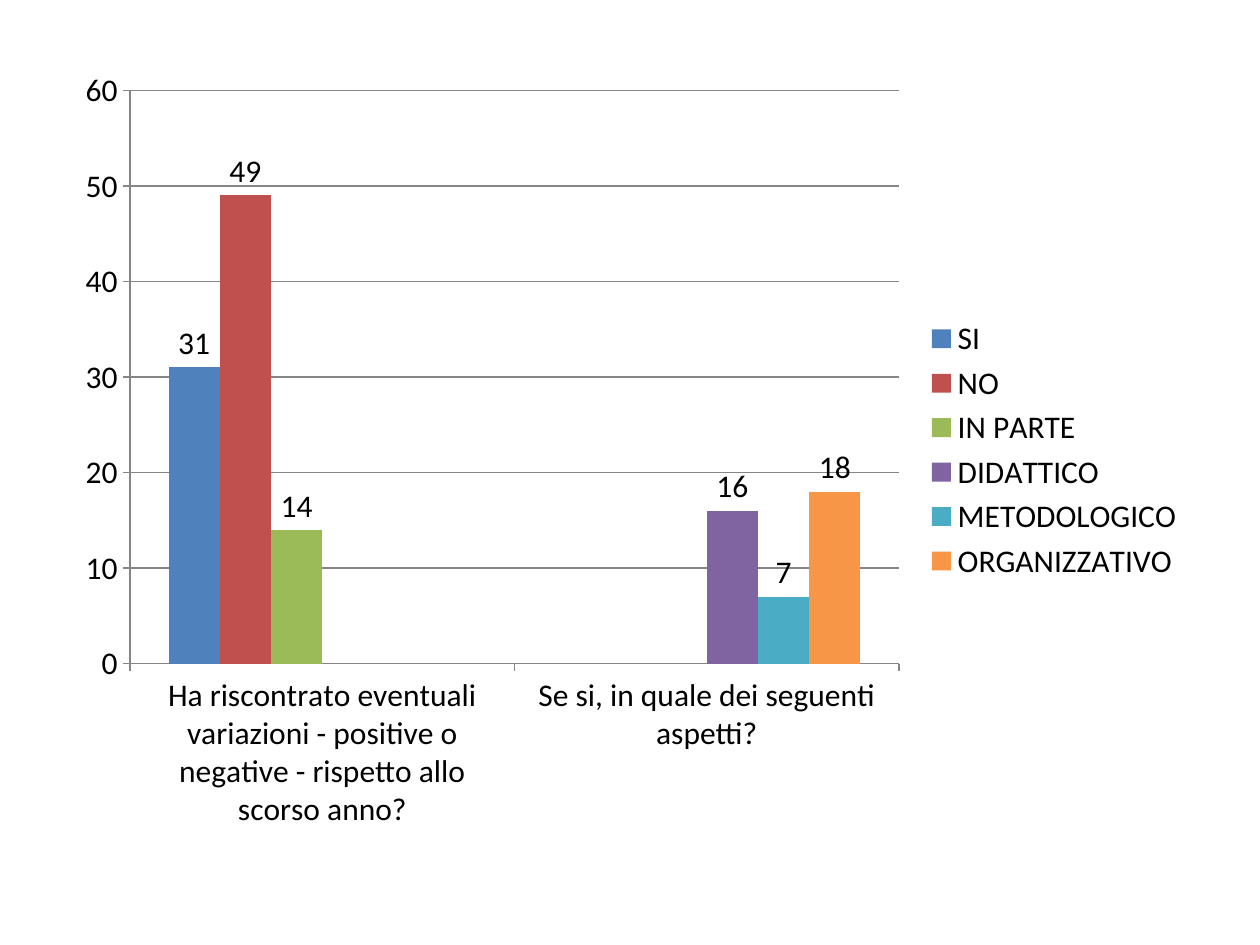
from pptx import Presentation
from pptx import util as u
from pptx.chart import data as cd
from pptx.dml.color import RGBColor
from pptx.enum import chart as ch

CATS = [
    "Ha riscontrato eventuali variazioni - positive o negative - "
    "rispetto allo scorso anno?",
    "Se si, in quale dei seguenti aspetti?",
]
# Name, values for each question, colour
SERIES = [
    ("SI", (31, None), "4F81BD"),
    ("NO", (49, None), "C0504D"),
    ("IN PARTE", (14, None), "9BBB59"),
    ("DIDATTICO", (None, 16), "8064A2"),
    ("METODOLOGICO", (None, 7), "4BACC6"),
    ("ORGANIZZATIVO", (None, 18), "F79646"),
]


def tint(color, code):
    color.rgb = RGBColor.from_string(code)


def draw_chart(slide, left, top, width, height):
    data = cd.CategoryChartData()
    data.categories = CATS
    for name, vals, _ in SERIES:
        data.add_series(name, vals)
    chart = slide.shapes.add_chart(
        ch.XL_CHART_TYPE.COLUMN_CLUSTERED, left, top, width, height, data
    ).chart
    chart.has_title = False
    chart.font.name = "Calibri"
    chart.font.size = u.Pt(18)
    tint(chart.font.color, "000000")

    # Legend
    chart.has_legend = True
    chart.legend.position = ch.XL_LEGEND_POSITION.RIGHT
    chart.legend.include_in_layout = False

    # Axes and grid
    scale = chart.value_axis
    scale.minimum_scale, scale.maximum_scale = 0, 60
    scale.major_unit = 10
    scale.has_major_gridlines = True
    for axis in (chart.category_axis, scale):
        axis.major_tick_mark = ch.XL_TICK_MARK.OUTSIDE
        axis.minor_tick_mark = ch.XL_TICK_MARK.NONE
    for part in (chart.category_axis, scale, scale.major_gridlines):
        part.format.line.width = u.Pt(0.75)
        tint(part.format.line.color, "868686")

    # Columns and their values
    plot = chart.plots[0]
    plot.gap_width = 150
    plot.overlap = 0
    plot.vary_by_categories = False
    for bars, (_, _, code) in zip(plot.series, SERIES):
        bars.format.fill.solid()
        tint(bars.format.fill.fore_color, code)
        labels = bars.data_labels
        labels.show_value = True
        labels.position = ch.XL_LABEL_POSITION.OUTSIDE_END


def main():
    prs = Presentation()
    prs.slide_width, prs.slide_height = u.Cm(25.4), u.Cm(19.05)
    slide = prs.slides.add_slide(prs.slide_layouts[6])
    draw_chart(slide, u.Cm(1.27), u.Cm(1.12), u.Cm(22.86), u.Cm(15.9))
    prs.save("out.pptx")


if __name__ == "__main__":
    main()
